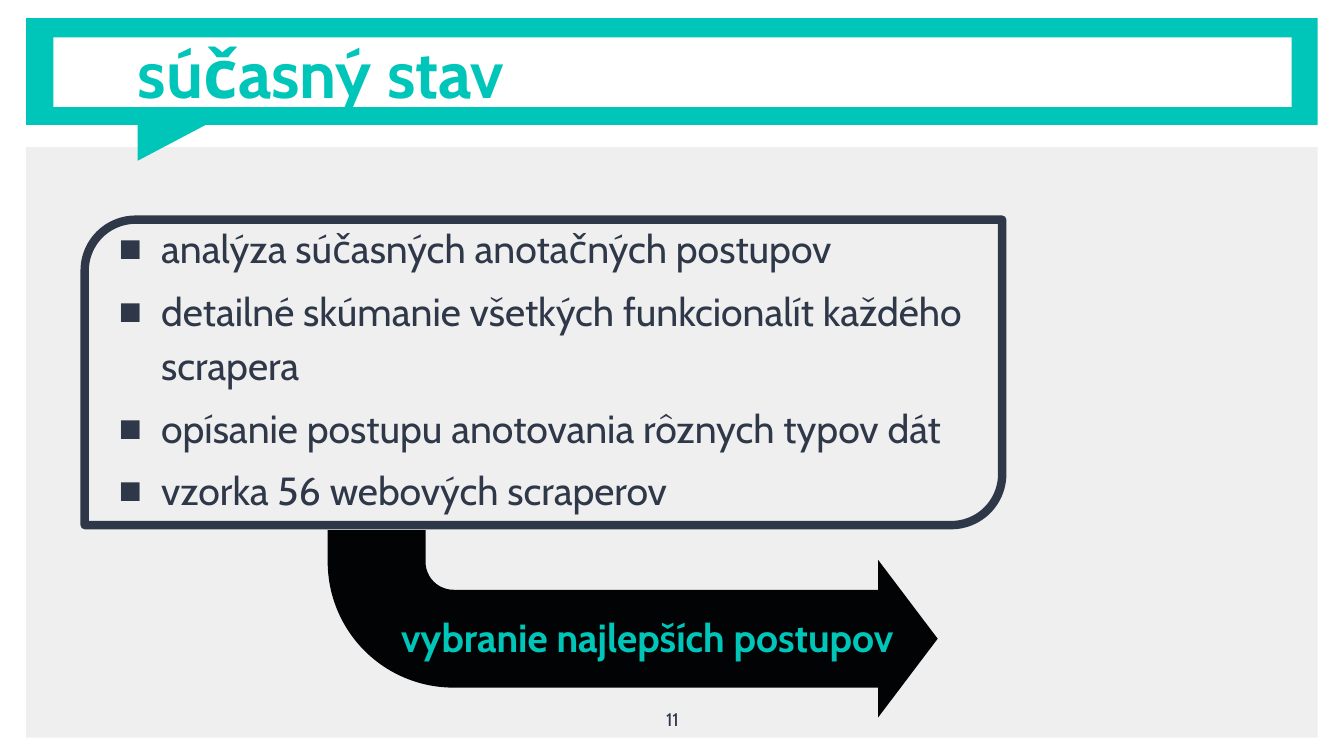
from lxml.etree import SubElement
from pptx import Presentation
from pptx.dml.color import RGBColor
from pptx.enum.shapes import MSO_SHAPE
from pptx.enum.text import MSO_ANCHOR, PP_ALIGN
from pptx.oxml.ns import qn
from pptx.util import Inches, Pt

COLORS = {"teal": "00C5B9", "white": "FFFFFF", "panel": "EFEFEF",
          "navy": "2F3848", "black": "020305"}
FONT = "Cabin"
POINTS = [
    "analýza súčasných anotačných postupov",
    "detailné skúmanie všetkých funkcionalít každého scrapera",
    "opísanie postupu anotovania rôznych typov dát",
    "vzorka 56 webových scraperov",
]


def rgb(name):
    return RGBColor.from_string(COLORS[name])


def add_shape(slide, kind, box, fill=None, line=None, width=0):
    sp = slide.shapes.add_shape(kind, *map(Inches, box))
    sp.shadow.inherit = False
    if fill:
        sp.fill.solid()
        sp.fill.fore_color.rgb = rgb(fill)
    else:
        sp.fill.background()
    if line:
        sp.line.color.rgb = rgb(line)
        sp.line.width = Pt(width)
    else:
        sp.line.fill.background()
    return sp


def add_text_frame(slide, box, wrap=True, anchor=MSO_ANCHOR.TOP):
    tf = slide.shapes.add_textbox(*map(Inches, box)).text_frame
    tf.word_wrap = wrap
    tf.vertical_anchor = anchor
    tf.margin_left = tf.margin_right = Inches(0.1)
    tf.margin_top = tf.margin_bottom = Inches(0.1)
    return tf


def add_run(p, text, size, color, bold=False):
    r = p.add_run()
    r.text = text
    r.font.name = FONT
    r.font.size = Pt(size)
    r.font.bold = bold
    r.font.color.rgb = rgb(color)


def set_bullet(p, char, color, percent):
    """Give the paragraph a hanging bullet, sized relative to its text."""
    ppr = p._p.get_or_add_pPr()
    ppr.set("marL", str(Inches(0.5)))
    ppr.set("indent", str(Inches(-0.42)))
    clr = SubElement(ppr, qn("a:buClr"))
    SubElement(clr, qn("a:srgbClr"), val=COLORS[color])
    SubElement(ppr, qn("a:buSzPct"), val=str(percent * 1000))
    SubElement(ppr, qn("a:buFont"), typeface=FONT)
    SubElement(ppr, qn("a:buChar"), char=char)


def add_title_banner(slide, box, title):
    """Speech-bubble banner: teal frame, pointer below it, white inside."""
    x, y, w, h = box
    add_shape(slide, MSO_SHAPE.RECTANGLE, box, "teal")
    pointer = add_shape(slide, MSO_SHAPE.RIGHT_TRIANGLE,
                        (x + 1.32, y + 0.72, 0.48, 0.91), "teal")
    pointer.rotation = 90
    add_shape(slide, MSO_SHAPE.RECTANGLE,
              (x + 0.27, y + 0.19, w - 0.53, h - 0.37), "white")
    tf = add_text_frame(slide, (x + 1.01, y, 4.83, h), anchor=MSO_ANCHOR.MIDDLE)
    add_run(tf.paragraphs[0], title, 48, "teal", bold=True)


def add_points(slide, box, points):
    x, y, w, h = box
    tf = add_text_frame(slide, (x + 0.16, y - 0.12, w + 0.74, h))
    for i, point in enumerate(points):
        p = tf.add_paragraph() if i else tf.paragraphs[0]
        p.line_spacing = 1.15
        p.space_before = Pt(6 if i else 0)
        set_bullet(p, "■", "navy", 62)
        add_run(p, point, 28, "navy")
    add_shape(slide, MSO_SHAPE.ROUND_2_DIAG_RECTANGLE, box, line="navy", width=6)


def add_result_arrow(slide, box, label):
    x, y, w, h = box
    arrow = add_shape(slide, MSO_SHAPE.BENT_ARROW, box, "black")
    for i, value in enumerate((0.522, 0.421, 0.318, 0.671)):
        arrow.adjustments[i] = value
    arrow._element.spPr.find(qn("a:xfrm")).set("flipV", "1")
    tf = add_text_frame(slide, (x + 0.63, y + 0.78, 5.27, 0.57), wrap=False)
    tf.margin_top = tf.margin_bottom = Inches(0.05)
    add_run(tf.paragraphs[0], label, 28, "teal", bold=True)


def add_page_number(slide, box, number):
    p = add_text_frame(slide, box).paragraphs[0]
    p.alignment = PP_ALIGN.CENTER
    add_run(p, number, 13, "navy")


def main():
    prs = Presentation()
    prs.slide_width, prs.slide_height = Inches(13.33), Inches(7.5)
    slide = prs.slides.add_slide(prs.slide_layouts[6])
    add_shape(slide, MSO_SHAPE.RECTANGLE, (0.26, 1.46, 12.81, 5.86), "panel")
    add_title_banner(slide, (0.26, 0.18, 12.81, 1.06), "súčasný stav")
    add_page_number(slide, (6.37, 6.93, 0.6, 0.57), "11")
    add_result_arrow(slide, (3.25, 5.26, 6.05, 1.86), "vybranie najlepších postupov")
    add_points(slide, (0.84, 2.18, 9.1, 3.03), POINTS)
    prs.save("out.pptx")


if __name__ == "__main__":
    main()
